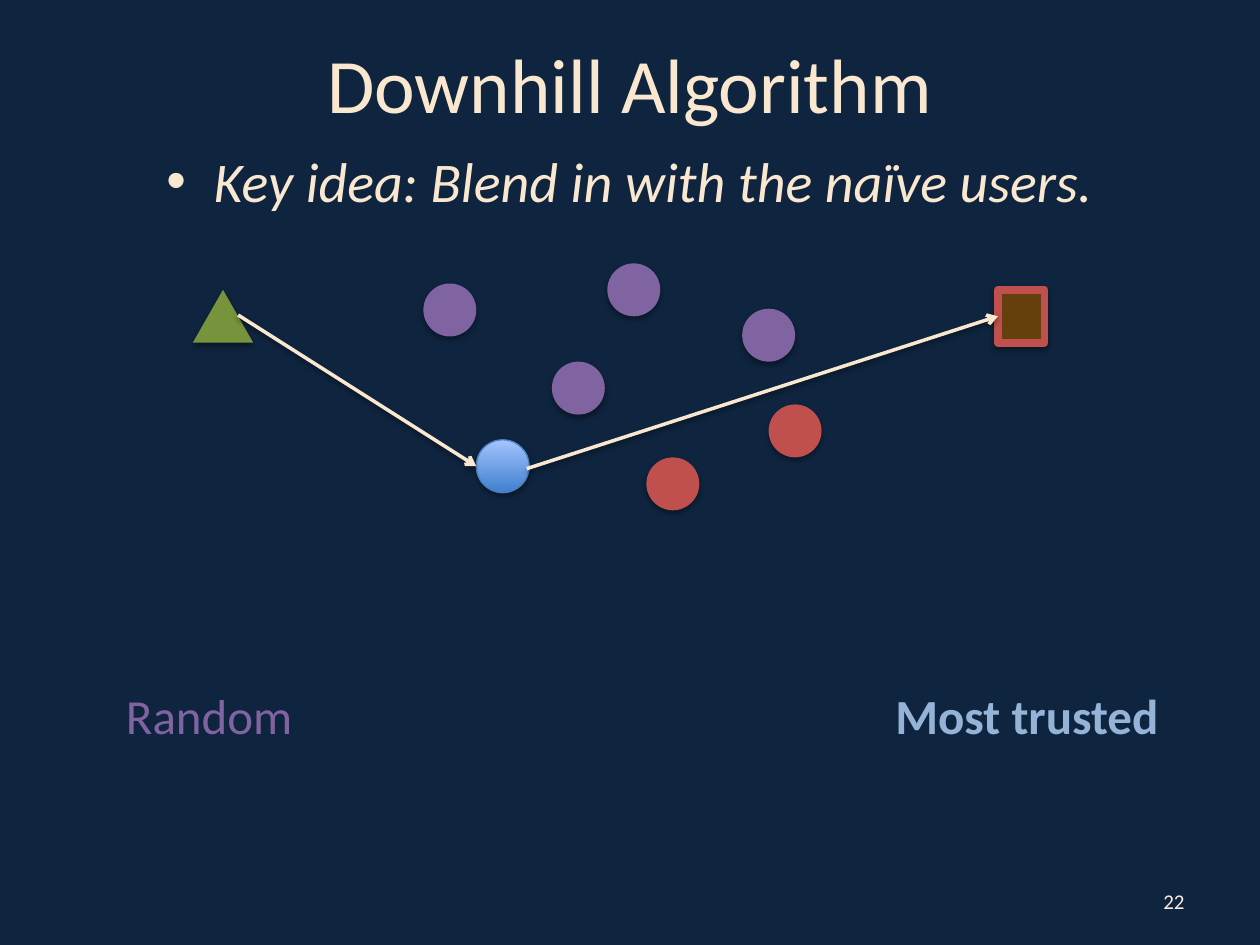
import dataclasses

import lxml.etree
import pptx
import pptx.dml.color
import pptx.enum.dml
import pptx.enum.shapes
import pptx.enum.text
import pptx.oxml.ns
import pptx.util

Inches = pptx.util.Inches
Pt = pptx.util.Pt
Kind = pptx.enum.shapes.MSO_SHAPE
Align = pptx.enum.text.PP_ALIGN
Anchor = pptx.enum.text.MSO_ANCHOR
qn = pptx.oxml.ns.qn


@dataclasses.dataclass(frozen=True)
class Theme:
    font: str = "Calibri"
    background: str = "0F243E"
    cream: str = "F9E7D0"
    number: str = "FBEDDD"
    purple: str = "8064A2"
    red: str = "C0504D"
    green: str = "77933C"
    brown: str = "653F0D"
    blue_dark: str = "3F80CE"
    blue_light: str = "A4C4FF"
    blue_line: str = "4B7EBC"
    pale_blue: str = "95B3D7"
    title_size: int = 44
    body_size: int = 32
    label_size: int = 28
    number_size: int = 12


THEME = Theme()
NODE_SIZE = 0.42


def rgb(value):
    return pptx.dml.color.RGBColor.from_string(value)


def place(shape, box):
    shape.left, shape.top, shape.width, shape.height = map(Inches, box)


def write(shape, text, size, color, align=Align.CENTER, bold=False, italic=False):
    frame = shape.text_frame
    frame.word_wrap = True
    frame.text = text
    para = frame.paragraphs[0]
    para.alignment = align
    para.space_before = Pt(0)
    font = para.runs[0].font
    font.name, font.size, font.color.rgb = THEME.font, Pt(size), rgb(color)
    font.bold, font.italic = bold, italic


def add_shadow(shape, opacity, distance):
    """Drop a soft black shadow straight down; call after fill and line are set."""
    properties = shape._element.spPr
    effects = properties.find(qn("a:effectLst"))
    if effects is None:
        effects = lxml.etree.SubElement(properties, qn("a:effectLst"))
    shadow = lxml.etree.SubElement(
        effects, qn("a:outerShdw"), blurRad=str(Pt(3.1)), dist=str(Pt(distance)),
        dir="5400000", rotWithShape="0")
    color = lxml.etree.SubElement(shadow, qn("a:srgbClr"), val="000000")
    lxml.etree.SubElement(color, qn("a:alpha"), val=str(opacity * 1000))


def add_node(page, kind, box, fill, line=None, line_width=0):
    """Add a filled shape; a pair of colours gives a gradient from bottom to top."""
    node = page.shapes.add_shape(kind, *map(Inches, box))
    if isinstance(fill, tuple):
        node.fill.gradient()
        node.fill.gradient_angle = 90
        for stop, color in zip(node.fill.gradient_stops, fill):
            stop.color.rgb = rgb(color)
    else:
        node.fill.solid()
        node.fill.fore_color.rgb = rgb(fill)
    if line:
        node.line.color.rgb = rgb(line)
        node.line.width = Pt(line_width)
    else:
        node.line.fill.background()
    node.shadow.inherit = False
    add_shadow(node, 35, 1.8)
    return node


def add_arrow(page, start, end):
    arrow = page.shapes.add_connector(
        pptx.enum.shapes.MSO_CONNECTOR.STRAIGHT, *map(Inches, start + end))
    arrow.line.color.rgb = rgb(THEME.cream)
    arrow.line.width = Pt(2)
    lxml.etree.SubElement(arrow.line._get_or_add_ln(), qn("a:tailEnd"), type="arrow")
    add_shadow(arrow, 38, 1.6)
    return arrow


def add_heading(page, box):
    left, top, width, _ = box
    title, body = page.placeholders[0], page.placeholders[1]
    place(title, (left, top, width, 1.05))
    write(title, "Downhill Algorithm", THEME.title_size, THEME.cream)
    title.text_frame.vertical_anchor = Anchor.MIDDLE

    place(body, (left, top + 0.98, width, 2.04))
    properties = body.text_frame.paragraphs[0]._p.get_or_add_pPr()
    properties.set("marL", "0")
    properties.set("indent", "0")
    lxml.etree.SubElement(properties, qn("a:buNone"))
    write(body, "Key idea: Blend in with the naïve users.",
          THEME.body_size, THEME.cream, italic=True)


def add_network(page, box):
    left, top, _, _ = box

    def at(x, y, width=NODE_SIZE):
        return left + x, top + y, width, NODE_SIZE

    target = add_node(page, Kind.RECTANGLE, at(6.39, 0.21, 0.37),
                      THEME.brown, THEME.red, 4.5)
    add_node(page, Kind.ISOSCELES_TRIANGLE, at(0, 0.21, 0.48), THEME.green)
    users = [
        (4.36, 0.36, THEME.purple),
        (4.57, 1.12, THEME.red),
        (3.6, 1.54, THEME.red),
        (2.85, 0.78, THEME.purple),
        (3.29, 0, THEME.purple),
        (1.83, 0.16, THEME.purple),
    ]
    for x, y, color in users:
        add_node(page, Kind.OVAL, at(x, y), color)
    add_node(page, Kind.OVAL, at(2.25, 1.4),
             (THEME.blue_dark, THEME.blue_light), THEME.blue_line, 0.75)

    middle = top + 0.41
    add_arrow(page, (left + 0.36, middle), (left + 2.25, top + 1.61))
    last_hop = add_arrow(page, (left + 2.65, top + 1.63), (left + 6.39, middle))
    last_hop.end_connect(target, 1)


def add_labels(page, box):
    left, top, width, height = box
    label_width = 2.7
    labels = [
        ("Most trusted", left + width - label_width, THEME.pale_blue, True),
        ("Random", left, THEME.purple, False),
    ]
    for text, x, color, bold in labels:
        label = page.shapes.add_textbox(*map(Inches, (x, top, label_width, height)))
        write(label, text, THEME.label_size, color, bold=bold)
        label.text_frame.auto_size = pptx.enum.text.MSO_AUTO_SIZE.SHAPE_TO_FIT_TEXT


def add_page_number(page, box):
    number = page.shapes.add_textbox(*map(Inches, box))
    write(number, "22", THEME.number_size, THEME.number, Align.RIGHT)
    number.text_frame.vertical_anchor = Anchor.MIDDLE


def main():
    deck = pptx.Presentation()
    deck.slide_width, deck.slide_height = Inches(10), Inches(7.5)
    page = deck.slides.add_slide(deck.slide_layouts[1])
    page.background.fill.solid()
    page.background.fill.fore_color.rgb = rgb(THEME.background)
    add_heading(page, (0.5, 0.13, 9, 3.02))
    add_page_number(page, (7.17, 6.95, 2.33, 0.4))
    add_network(page, (1.53, 2.09, 6.76, 1.96))
    add_labels(page, (0.31, 5.39, 9.19, 0.57))
    deck.save("out.pptx")


if __name__ == "__main__":
    main()
